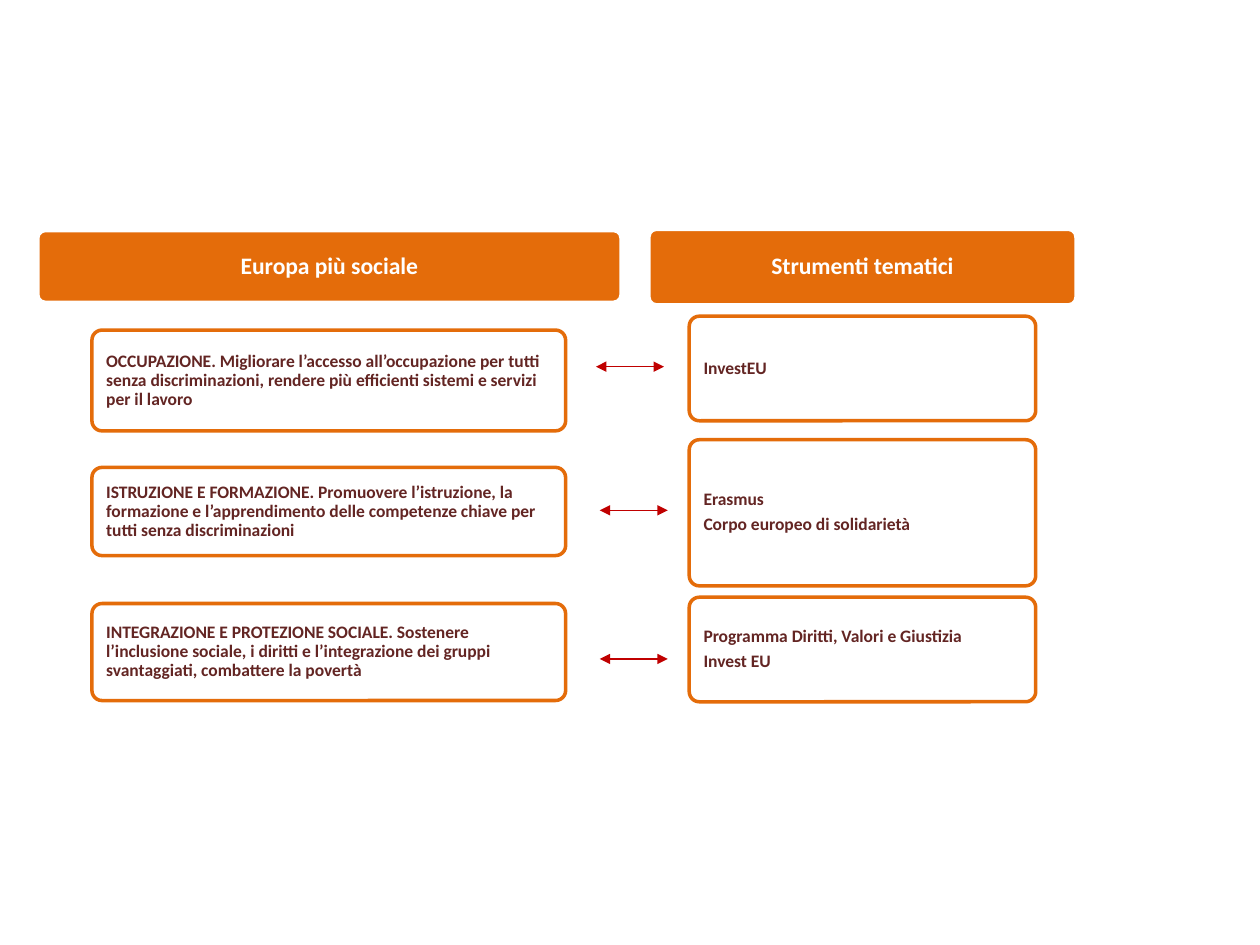
import pptx
import pptx.dml.color
import pptx.enum.shapes
import pptx.enum.text
import pptx.oxml
import pptx.oxml.ns
import pptx.util
from lxml import etree

Inches = pptx.util.Inches
Pt = pptx.util.Pt
ALIGN = pptx.enum.text.PP_ALIGN
HEX = {"orange": "E46C0A", "white": "FFFFFF", "brown": "632523", "red": "C00000"}

# Look of the two kinds of box
HEAD = {
    "fill": "orange", "alpha": 100, "line": "white", "ink": "white",
    "radius": 0.06, "inset": (0.03, 0.02),
    "font": {"name": "Calibri", "size": Pt(13.5), "bold": True},
    "para": {"alignment": ALIGN.CENTER, "line_spacing": 0.9, "space_after": Pt(4.7)},
}
CARD = {
    "fill": "white", "alpha": 90, "line": "orange", "ink": "brown",
    "radius": 0.08, "inset": (0.09, 0.03),
    "font": {"name": "Calibri", "size": Pt(10), "bold": True},
    "para": {"alignment": ALIGN.LEFT, "line_spacing": 0.9, "space_after": Pt(3.5)},
}

# Card entries: offset below the column top, height, paragraphs
GOALS = [
    (0.79, 0.8, ["OCCUPAZIONE. Migliorare l’accesso all’occupazione per tutti senza "
                 "discriminazioni, rendere più efficienti sistemi e servizi per il lavoro"]),
    (1.88, 0.7, ["ISTRUZIONE E FORMAZIONE. Promuovere l’istruzione, la formazione e "
                 "l’apprendimento delle competenze chiave per tutti senza discriminazioni"]),
    (2.96, 0.77, ["INTEGRAZIONE E PROTEZIONE SOCIALE. Sostenere l’inclusione sociale, i "
                  "diritti e l’integrazione dei gruppi svantaggiati, combattere la povertà"]),
]
TOOLS = [
    (0.69, 0.83, ["InvestEU"]),
    (1.67, 1.16, ["Erasmus", "Corpo europeo di solidarietà"]),
    (2.92, 0.83, ["Programma Diritti, Valori e Giustizia", "Invest EU"]),
]
ARROWS = [(0, 0), (0.03, 1.14), (0.03, 2.32)]


def color(name):
    return pptx.dml.color.RGBColor.from_string(HEX[name])


def apply(target, values):
    for key, value in values.items():
        setattr(target, key, value)


def panel(slide, box, lines, look):
    """Rounded box with its paragraphs."""
    kind = pptx.enum.shapes.MSO_SHAPE.ROUNDED_RECTANGLE
    shape = slide.shapes.add_shape(kind, *map(Inches, box))
    shape.adjustments[0] = look["radius"] / min(box[2:])
    shape.shadow.inherit = False
    shape.fill.solid()
    shape.fill.fore_color.rgb = color(look["fill"])
    if look["alpha"] < 100:
        tint = shape.fill._xPr.find(".//" + pptx.oxml.ns.qn("a:srgbClr"))
        etree.SubElement(tint, pptx.oxml.ns.qn("a:alpha"), val=str(look["alpha"] * 1000))
    shape.line.color.rgb = color(look["line"])
    shape.line.width = Pt(2)

    side, edge = map(Inches, look["inset"])
    frame = shape.text_frame
    apply(frame, {
        "word_wrap": True, "vertical_anchor": pptx.enum.text.MSO_ANCHOR.MIDDLE,
        "margin_left": side, "margin_right": side,
        "margin_top": edge, "margin_bottom": edge,
    })
    for i, line in enumerate(lines):
        para = frame.add_paragraph() if i else frame.paragraphs[0]
        apply(para, look["para"])
        run = para.add_run()
        run.text = line
        apply(run.font, look["font"])
        run.font.color.rgb = color(look["ink"])


def column(slide, box, title, indent, width, cards):
    """Heading with the cards below it; the box is that of the heading."""
    left, top = box[:2]
    panel(slide, box, [title], HEAD)
    for drop, height, lines in cards:
        panel(slide, (left + indent, top + drop, width, height), lines, CARD)


def links(slide, left, top, width):
    """Double-headed arrows between the columns."""
    for shift, drop in ARROWS:
        x, y = left + shift, top + drop
        kind = pptx.enum.shapes.MSO_CONNECTOR.STRAIGHT
        arrow = slide.shapes.add_connector(kind, *map(Inches, (x, y, x + width, y)))
        arrow.line.color.rgb = color("red")
        arrow.line.width = Pt(0.75)
        for end in ("a:headEnd", "a:tailEnd"):
            etree.SubElement(arrow.line._get_or_add_ln(), pptx.oxml.ns.qn(end), type="triangle")
        etree.SubElement(arrow._element.spPr, pptx.oxml.ns.qn("a:effectLst"))


def main():
    deck = pptx.Presentation()
    deck.slide_width, deck.slide_height = Inches(10), Inches(7.5)
    slide = deck.slides.add_slide(deck.slide_layouts[6])
    column(slide, (0.3, 1.83, 4.63, 0.57), "Europa più sociale", 0.43, 3.76, GOALS)
    column(slide, (5.15, 1.82, 3.39, 0.6), "Strumenti tematici", 0.32, 2.75, TOOLS)
    links(slide, 4.73, 2.91, 0.54)
    deck.save("out.pptx")


if __name__ == "__main__":
    main()
